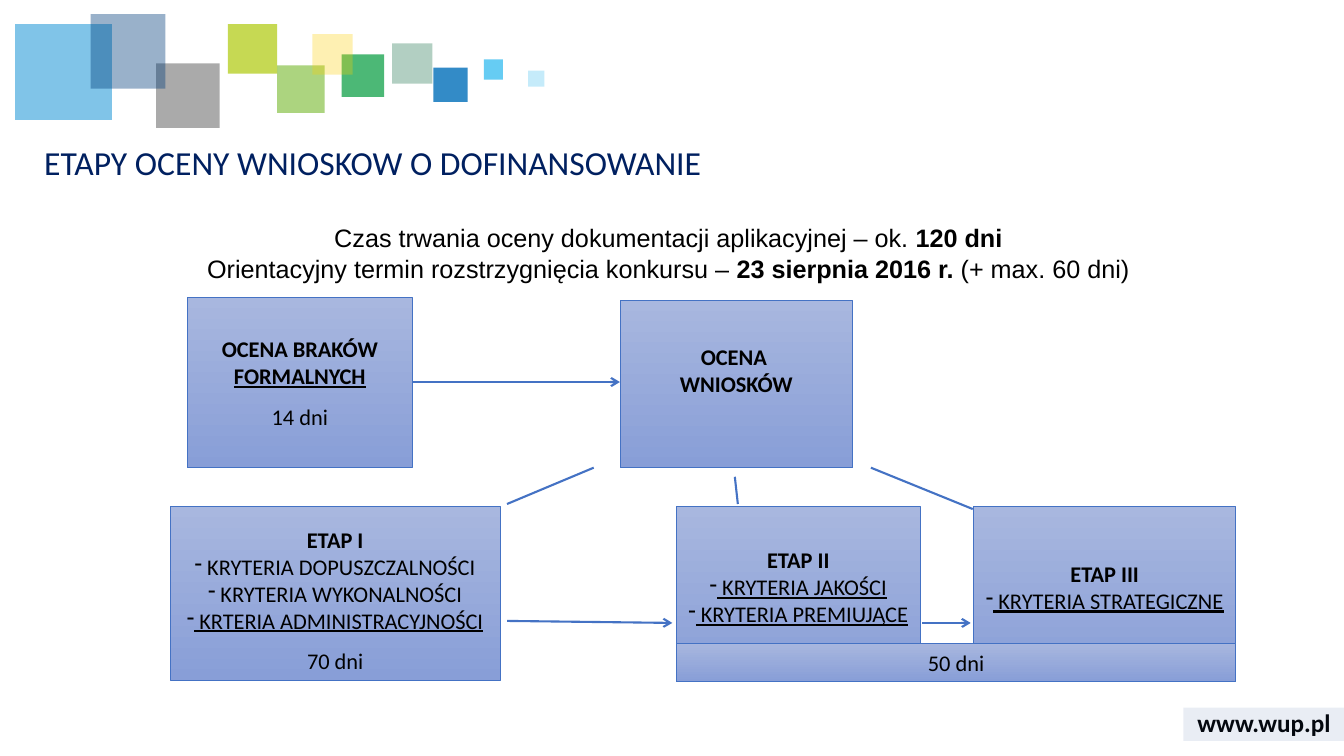
from dataclasses import dataclass

from lxml.etree import SubElement
from pptx import Presentation
from pptx.dml.color import RGBColor
from pptx.enum.shapes import MSO_CONNECTOR, MSO_SHAPE
from pptx.enum.text import MSO_ANCHOR, PP_ALIGN
from pptx.oxml.ns import qn
from pptx.util import Inches, Pt

COLUMNS, ROWS = 133.33, 75
CELL = Inches(0.1)


@dataclass(frozen=True)
class Theme:
    ink: str = "000000"
    heading: str = "002060"
    accent: str = "4472C4"
    box_top: str = "A8B7DF"
    box_bottom: str = "889ED7"
    footer: str = "2F5597"
    face: str = "Calibri"
    lead_face: str = "Arial"
    heading_size: int = 24
    lead_size: int = 18
    body_size: int = 16


@dataclass
class Line:
    """One paragraph: spans are (text, marks), marks holding b for bold and u for underline."""
    spans: list
    spacing: float = 1.0
    bullet: bool = False


class Page:
    def __init__(self, deck, theme):
        self.theme = theme
        self.shapes = deck.slides.add_slide(deck.slide_layouts[6]).shapes

    def fill_text(self, shape, lines, size, face=None, color=None,
                  align=PP_ALIGN.CENTER, anchor=MSO_ANCHOR.MIDDLE):
        frame = shape.text_frame
        frame.word_wrap = True
        frame.vertical_anchor = anchor
        for index, line in enumerate(lines):
            para = frame.add_paragraph() if index else frame.paragraphs[0]
            para.alignment = align
            para.line_spacing = line.spacing
            if line.bullet:
                properties = para._p.get_or_add_pPr()
                properties.set("marL", "0")
                properties.set("indent", "0")
                SubElement(properties, qn("a:buFontTx"))
                SubElement(properties, qn("a:buChar")).set("char", "-")
            for text, marks in line.spans:
                span = para.add_run()
                span.text = text
                span.font.name = face or self.theme.face
                span.font.size = Pt(size)
                span.font.color.rgb = RGBColor.from_string(color or self.theme.ink)
                span.font.bold = "b" in marks
                span.font.underline = "u" in marks

    def text(self, place, lines, size, **style):
        box = self.shapes.add_textbox(*(round(cells * CELL) for cells in place))
        self.fill_text(box, lines, size, **style)

    def rectangle(self, place):
        shape = self.shapes.add_shape(
            MSO_SHAPE.RECTANGLE, *(round(cells * CELL) for cells in place))
        shape.shadow.inherit = False
        return shape

    def tile(self, place, color, opacity):
        """Borderless rectangle with an opacity in percent."""
        shape = self.rectangle(place)
        shape.line.fill.background()
        shape.fill.solid()
        shape.fill.fore_color.rgb = RGBColor.from_string(color)
        tint = shape._element.spPr.find(qn("a:solidFill"))[0]
        SubElement(tint, qn("a:alpha")).set("val", str(opacity * 1000))

    def stage(self, place, lines, bottom=0.5):
        """Gradient box; bottom is its lower inset in cells."""
        shape = self.rectangle(place)
        shape.fill.gradient()
        shape.fill.gradient_angle = 270
        colors = (self.theme.box_top, self.theme.box_bottom)
        for position, (stop, color) in enumerate(zip(shape.fill.gradient_stops, colors)):
            stop.color.rgb = RGBColor.from_string(color)
            stop.position = position
        shape.line.color.rgb = RGBColor.from_string(self.theme.accent)
        shape.line.width = Pt(0.5)
        shape.text_frame.margin_bottom = round(bottom * CELL)
        self.fill_text(shape, lines, self.theme.body_size)

    def link(self, ends, arrow=False):
        connector = self.shapes.add_connector(
            MSO_CONNECTOR.STRAIGHT, *(round(cells * CELL) for cells in ends))
        connector.line.color.rgb = RGBColor.from_string(self.theme.accent)
        connector.line.width = Pt(1.5)
        properties = connector._element.spPr
        if arrow:
            SubElement(properties.find(qn("a:ln")), qn("a:tailEnd")).set("type", "arrow")
        SubElement(properties, qn("a:effectLst"))


TILES = [
    ((38.9, 4.3, 4, 4), "006138", 30),
    ((43, 6.7, 3.4, 3.4), "006EB9", 80),
    ((33.9, 5.4, 4.2, 4.2), "009A3C", 70),
    ((1.5, 2.4, 9.6, 9.5), "028BD3", 50),
    ((27.5, 6.5, 4.7, 4.7), "75B82A", 60),
    ((15.5, 6.3, 6.3, 6.4), "575757", 50),
    ((9, 1.4, 7.4, 7.4), "003D7C", 40),
    ((48, 5.9, 1.9, 2), "40C0F1", 80),
    ((22.6, 2.4, 4.9, 4.9), "AFCA0B", 70),
    ((31, 3.4, 4, 4), "FED000", 30),
    ((52.4, 7, 1.6, 1.6), "40C0F1", 30),
]

BLANK_TAIL = 3.2  # lower inset that lifts the text by half a line

STAGES = [
    ((18.6, 29.5, 22.3, 16.9), 0.5, [
        Line([("OCENA BRAKÓW ", "b"), ("FORMALNYCH", "bu")]),
        Line([("14 dni", "")], 1.5)]),
    ((61.5, 29.8, 23.1, 16.6), BLANK_TAIL, [
        Line([("OCENA ", "b")]),
        Line([("WNIOSKÓW", "b")])]),
    ((16.9, 50.2, 32.7, 17.3), 0.5, [
        Line([("ETAP I", "b")], 1.5),
        Line([(" KRYTERIA DOPUSZCZALNOŚCI", "")], bullet=True),
        Line([(" KRYTERIA WYKONALNOŚCI", "")], bullet=True),
        Line([(" KRTERIA ADMINISTRACYJNOŚCI", "u")], bullet=True),
        Line([("70 dni", "")], 1.5)]),
    ((67.1, 50.2, 24.2, 17.4), BLANK_TAIL, [
        Line([("ETAP II", "b")], 1.5),
        Line([(" KRYTERIA JAKOŚCI", "u")], bullet=True),
        Line([(" KRYTERIA PREMIUJĄCE", "u")], bullet=True)]),
    ((96.6, 50.2, 26, 17.4), BLANK_TAIL, [
        Line([("ETAP III", "b")], 1.5),
        Line([(" KRYTERIA STRATEGICZNE", "u")], bullet=True)]),
    ((67.1, 63.8, 55.5, 3.8), 0.5, [Line([("50 dni", "")])]),
]

ARROWS = [(40.9, 37.9, 61.5, 37.9), (50.3, 61.6, 66.7, 61.8), (91.5, 61.8, 96.3, 61.8)]
BRANCHES = [(58.9, 46.4, 50.3, 50), (72.9, 47.3, 73.2, 50), (86.4, 46.4, 96.5, 50.5)]


def main():
    deck = Presentation()
    deck.slide_width = round(COLUMNS * CELL)
    deck.slide_height = round(ROWS * CELL)
    theme = Theme()
    page = Page(deck, theme)

    page.text((117.4, 69.7, 16, 4), [Line([("www.wup.pl", "b")])], theme.lead_size)
    for place, color, opacity in TILES:
        page.tile(place, color, opacity)
    page.tile((117.4, 70.2, 16, 3.3), theme.footer, 10)

    page.text((3.4, 13.6, 124.1, 5.5),
              [Line([("ETAPY OCENY WNIOSKOW O DOFINANSOWANIE", "")], 0.9)],
              theme.heading_size, color=theme.heading, align=PP_ALIGN.LEFT)
    page.text((10.1, 21.6, 112.4, 7.1), [
        Line([("Czas trwania oceny dokumentacji aplikacyjnej – ok. ", ""), ("120 dni", "b")]),
        Line([("Orientacyjny termin rozstrzygnięcia konkursu – ", ""),
              ("23 sierpnia 2016 r. ", "b"), ("(+ max. 60 dni)", "")]),
    ], theme.lead_size, face=theme.lead_face, anchor=MSO_ANCHOR.TOP)

    for place, bottom, lines in STAGES:
        page.stage(place, lines, bottom)
    for ends in ARROWS:
        page.link(ends, arrow=True)
    for ends in BRANCHES:
        page.link(ends)

    deck.save("out.pptx")


if __name__ == "__main__":
    main()
